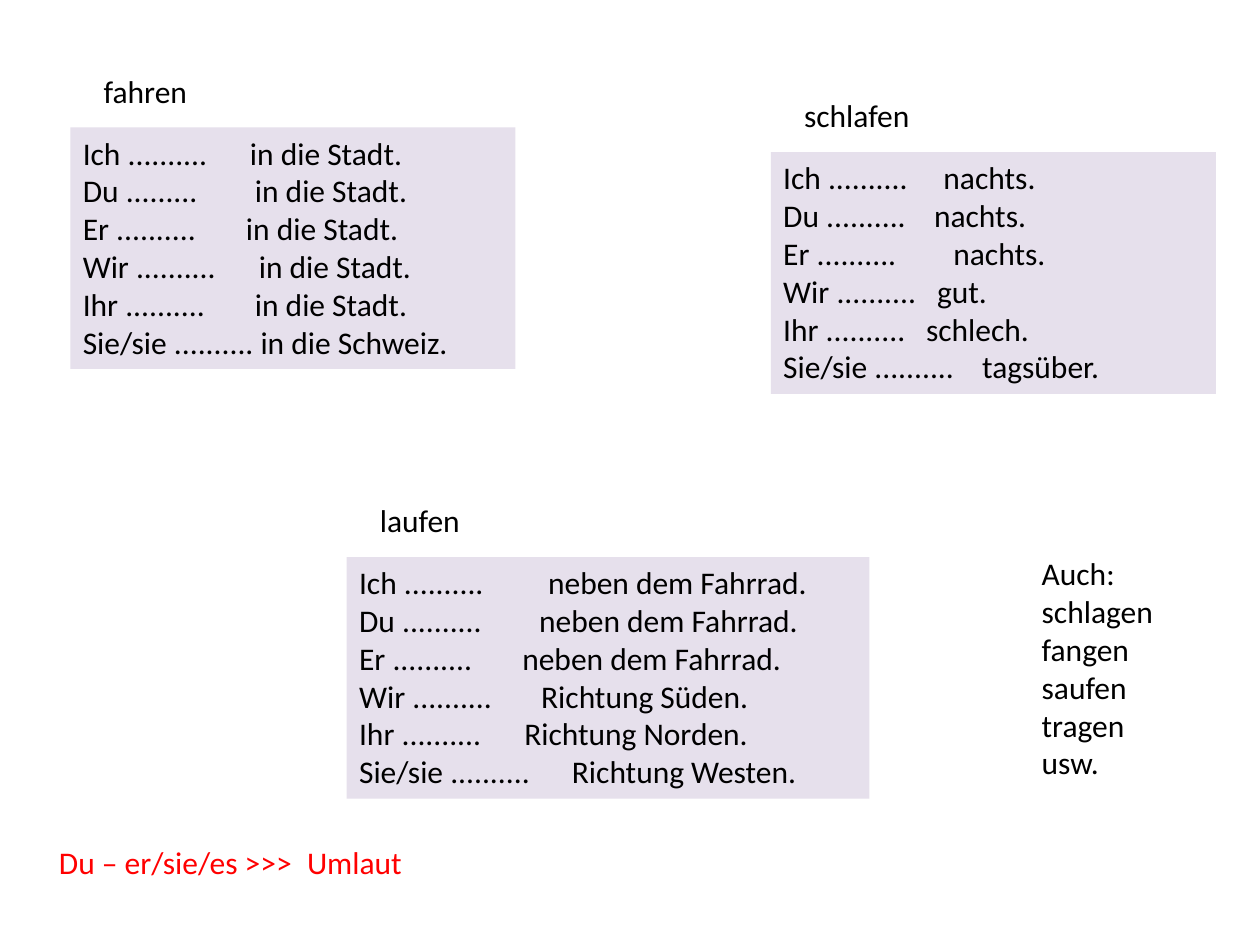
import dataclasses

import pptx
import pptx.dml.color
import pptx.enum.shapes
import pptx.enum.text
import pptx.oxml.ns
import pptx.util
from lxml import etree
from pptx.util import Cm


@dataclasses.dataclass(frozen=True)
class Theme:
    """Colours, font and type size of the slide."""
    font: str = "Calibri"
    size: int = 18
    text: str = "000000"
    accent: str = "FF0000"
    panel: str = "E6E0EC"


@dataclasses.dataclass(frozen=True)
class Box:
    """Position and size in centimetres."""
    left: float
    top: float
    width: float
    height: float

    def lengths(self):
        """Return the four lengths for a shape."""
        return Cm(self.left), Cm(self.top), Cm(self.width), Cm(self.height)


THEME = Theme()
LINE_HEIGHT = 1.02
PANEL_HEIGHT = 4.87

EXERCISES = [
    ("fahren", 2.24, Box(1.42, 2.57, 8.97, PANEL_HEIGHT), [
        ("Ich ..........", 3.37, "in die Stadt."),
        ("Du .........", 3.47, "in die Stadt."),
        ("Er ..........", 3.29, "in die Stadt."),
        ("Wir ..........", 3.55, "in die Stadt."),
        ("Ihr ..........", 3.47, "in die Stadt."),
        ("Sie/sie .......... in die Schweiz.", None, ""),
    ]),
    ("laufen", 2.16, Box(6.99, 11.23, 10.54, PANEL_HEIGHT), [
        ("Ich ..........", 3.81, "neben dem Fahrrad."),
        ("Du ..........", 3.63, "neben dem Fahrrad."),
        ("Er ..........", 3.29, "neben dem Fahrrad."),
        ("Wir ..........", 3.67, "Richtung Süden."),
        ("Ihr ..........", 3.33, "Richtung Norden."),
        ("Sie/sie ..........", 4.29, "Richtung Westen."),
    ]),
    ("schlafen", 2.67, Box(15.54, 3.07, 8.97, PANEL_HEIGHT), [
        ("Ich ..........", 3.23, "nachts."),
        ("Du ..........", 3.04, "nachts."),
        ("Er ..........", 3.43, "nachts."),
        ("Wir ..........", 3.1, "gut."),
        ("Ihr ..........", 2.88, "schlech."),
        ("Sie/sie ..........", 4.01, "tagsüber."),
    ]),
]
MORE_VERBS = ["Auch:", "schlagen", "fangen", "saufen", "tragen", "usw."]


def add_tab_stop(paragraph, position):
    """Set one left tab stop at a distance in centimetres."""
    properties = paragraph._p.get_or_add_pPr()
    tab_list = etree.Element(pptx.oxml.ns.qn("a:tabLst"))
    etree.SubElement(tab_list, pptx.oxml.ns.qn("a:tab"),
                     pos=str(int(Cm(position))), algn="l")
    properties.insert_element_before(tab_list, "a:defRPr", "a:extLst")


def write_lines(shape, lines, color=THEME.text, wrap=True):
    """Write (start, tab position, ending) lines as left-aligned paragraphs."""
    frame = shape.text_frame
    frame.word_wrap = wrap
    frame.auto_size = pptx.enum.text.MSO_AUTO_SIZE.SHAPE_TO_FIT_TEXT
    frame.vertical_anchor = pptx.enum.text.MSO_ANCHOR.TOP
    for index, (start, tab_position, ending) in enumerate(lines):
        paragraph = frame.add_paragraph() if index else frame.paragraphs[0]
        paragraph.alignment = pptx.enum.text.PP_ALIGN.LEFT
        paragraph.font.name = THEME.font
        paragraph.font.size = pptx.util.Pt(THEME.size)
        paragraph.font.color.rgb = pptx.dml.color.RGBColor.from_string(color)
        if tab_position is None:
            paragraph.text = start
        else:
            paragraph.text = f"{start}\t{ending}"
            add_tab_stop(paragraph, tab_position)


def add_label(slide, box, texts):
    """Add a plain text box with one paragraph for each text."""
    shape = slide.shapes.add_textbox(*box.lengths())
    write_lines(shape, [(text, None, "") for text in texts], wrap=False)


def add_exercise(slide, verb, verb_width, box, lines):
    """Add a verb heading and the tinted panel of sentences below it."""
    add_label(slide, Box(box.left + 0.42, box.top - 1.25, verb_width, LINE_HEIGHT), [verb])
    panel = slide.shapes.add_shape(
        pptx.enum.shapes.MSO_SHAPE.RECTANGLE, *box.lengths())
    panel.shadow.inherit = False
    panel.fill.solid()
    panel.fill.fore_color.rgb = pptx.dml.color.RGBColor.from_string(THEME.panel)
    panel.line.fill.background()
    write_lines(panel, lines)


def add_rule(slide, box):
    """Add the red vowel-change rule."""
    shape = slide.shapes.add_textbox(*box.lengths())
    write_lines(shape, [("Du – er/sie/es >>>", 5, "Umlaut")], THEME.accent)


def main():
    """Build and save the presentation."""
    presentation = pptx.Presentation()
    presentation.slide_width = Cm(25.4)
    presentation.slide_height = Cm(19.05)
    slide = presentation.slides.add_slide(presentation.slide_layouts[6])
    for exercise in EXERCISES:
        add_exercise(slide, *exercise)
    add_label(slide, Box(20.75, 11.05, 2.82, PANEL_HEIGHT), MORE_VERBS)
    add_rule(slide, Box(0.94, 16.87, 7.5, LINE_HEIGHT))
    presentation.save("out.pptx")


if __name__ == "__main__":
    main()
